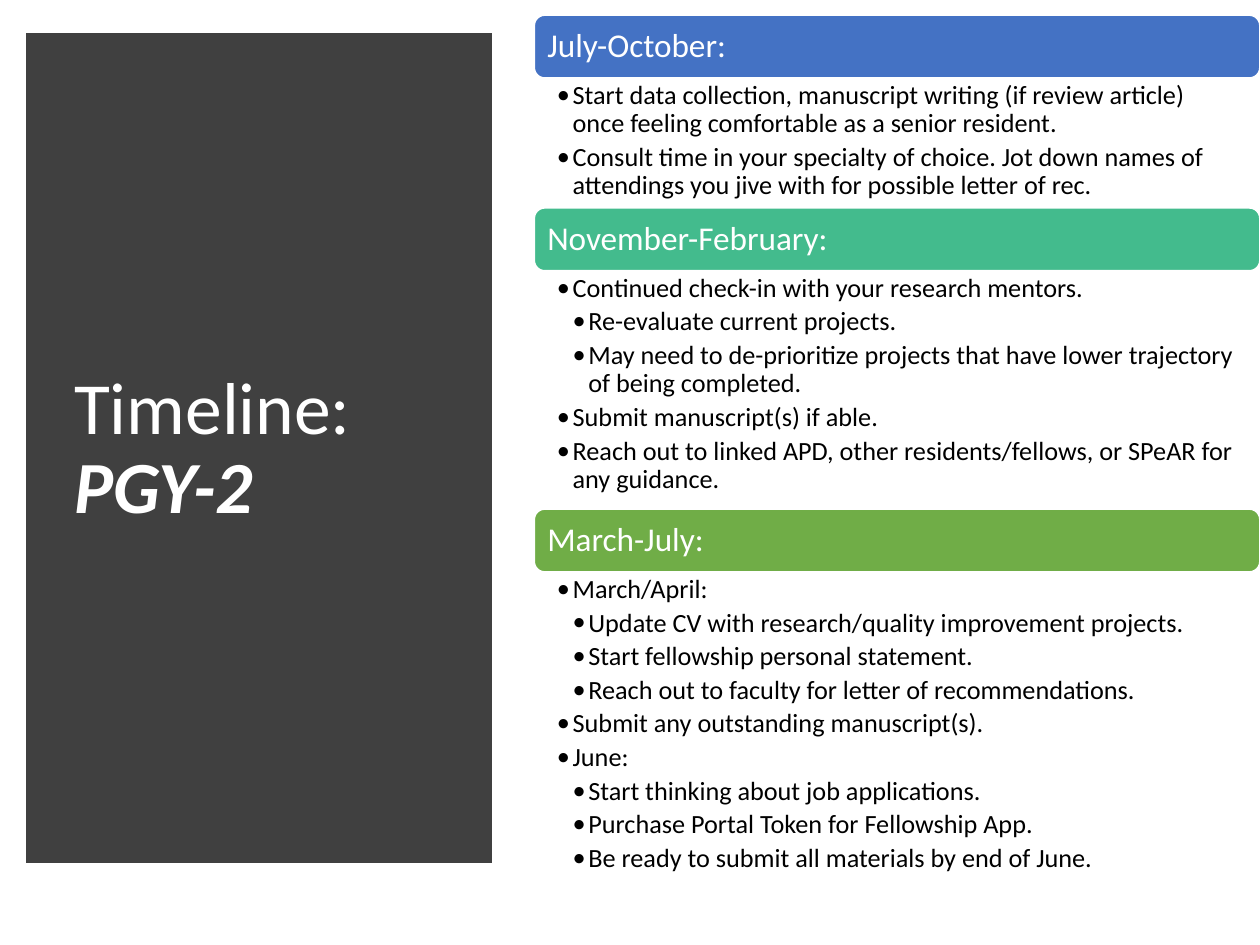
from lxml import etree
from pptx import Presentation
from pptx import util as u
from pptx.dml.color import RGBColor
from pptx.enum import shapes, text
from pptx.oxml import ns

SECTIONS = [
    ("July-October:", "4472C4", 1.03, [
        (1, "Start data collection, manuscript writing (if review article) once feeling comfortable as a senior resident."),
        (1, "Consult time in your specialty of choice. Jot down names of attendings you jive with for possible letter of rec."),
    ]),
    ("November-February:", "43BB8D", 1.89, [
        (1, "Continued check-in with your research mentors."),
        (2, "Re-evaluate current projects."),
        (2, "May need to de-prioritize projects that have lower trajectory of being completed."),
        (1, "Submit manuscript(s) if able."),
        (1, "Reach out to linked APD, other residents/fellows, or SPeAR for any guidance."),
    ]),
    ("March-July:", "70AD47", 2.84, [
        (1, "March/April:"),
        (2, "Update CV with research/quality improvement projects."),
        (2, "Start fellowship personal statement."),
        (2, "Reach out to faculty for letter of recommendations."),
        (1, "Submit any outstanding manuscript(s)."),
        (1, "June:"),
        (2, "Start thinking about job applications."),
        (2, "Purchase Portal Token for Fellowship App."),
        (2, "Be ready to submit all materials by end of June."),
    ]),
]
LEFT, TOP, WIDTH, HEADER_HEIGHT = 4.24, 0.12, 5.76, 0.5


def color(value):
    return RGBColor.from_string(value)


def apply(target, values):
    for name, value in values.items():
        setattr(target, name, value)


class Timeline:
    """Draw styled timeline elements on the current slide."""

    font = "Calibri"
    light, dark, panel_fill = "FFFFFF", "000000", "404040"

    def __init__(self, page):
        self.page = page

    def panel(self, kind, bounds, fill, line, line_width):
        box = self.page.shapes.add_shape(kind, *map(u.Inches, bounds))
        box.shadow.inherit = False
        box.fill.solid()
        box.fill.fore_color.rgb = color(fill)
        box.line.color.rgb = color(line)
        box.line.width = u.Pt(line_width)
        outline = box._element.spPr.find(ns.qn("a:ln"))
        etree.SubElement(outline, ns.qn("a:miter"), lim="800000")
        return box

    def frame(self, box, margins, anchor):
        sides = ("margin_left", "margin_top", "margin_right", "margin_bottom")
        apply(box.text_frame, dict(zip(sides, map(u.Inches, margins)), word_wrap=True, vertical_anchor=anchor))
        return box.text_frame

    def span(self, para, words, size, shade, **style):
        apply(para, {"alignment": text.PP_ALIGN.LEFT, "line_spacing": 0.9})
        span = para.add_run()
        span.text = words
        apply(span.font, {"name": self.font, "size": u.Pt(size), **style})
        span.font.color.rgb = color(shade)

    def title(self, bounds, first, second):
        box = self.page.shapes.add_textbox(*map(u.Inches, bounds))
        frame = self.frame(box, (0.1, 0.05, 0.1, 0.05), text.MSO_ANCHOR.MIDDLE)
        para = frame.paragraphs[0]
        self.span(para, first, 42, self.light)
        self.span(para, second, 42, self.light, bold=True, italic=True)

    def header(self, bounds, words, fill):
        box = self.panel(shapes.MSO_SHAPE.ROUNDED_RECTANGLE, bounds, fill, self.light, 1)
        frame = self.frame(box, (0.08,) * 4, text.MSO_ANCHOR.MIDDLE)
        self.span(frame.paragraphs[0], words, 19, self.light)

    def bullets(self, bounds, items):
        box = self.page.shapes.add_textbox(*map(u.Inches, bounds))
        frame = self.frame(box, (0.18, 0.03, 0.15, 0.03), text.MSO_ANCHOR.TOP)
        for index, (level, words) in enumerate(items):
            para = frame.add_paragraph() if index else frame.paragraphs[0]
            apply(para, {"level": level, "space_after": u.Pt(3)})
            self.span(para, words, 15, self.dark)
            properties = para._p.get_or_add_pPr()
            properties.set("marL", str(u.Inches(0.125 * level)))
            properties.set("indent", str(u.Inches(-0.125)))
            etree.SubElement(properties, ns.qn("a:buFont"), typeface=self.font)
            etree.SubElement(properties, ns.qn("a:buChar"), char="•")


def main():
    deck = Presentation()
    apply(deck, {"slide_width": u.Inches(10), "slide_height": u.Inches(7.5)})
    timeline = Timeline(deck.slides.add_slide(deck.slide_layouts[6]))
    fill = timeline.panel_fill
    timeline.panel(shapes.MSO_SHAPE.RECTANGLE, (0.28, 0.33, 3.56, 6.45), fill, fill, 10)
    timeline.title((0.49, 0.7, 3.12, 5.75), "Timeline: ", "PGY-2")
    top = TOP
    for heading, shade, height, items in SECTIONS:
        timeline.header((LEFT, top, WIDTH, HEADER_HEIGHT), heading, shade)
        top += HEADER_HEIGHT
        timeline.bullets((LEFT, top, WIDTH, height), items)
        top += height
    deck.save("out.pptx")


if __name__ == "__main__":
    main()
